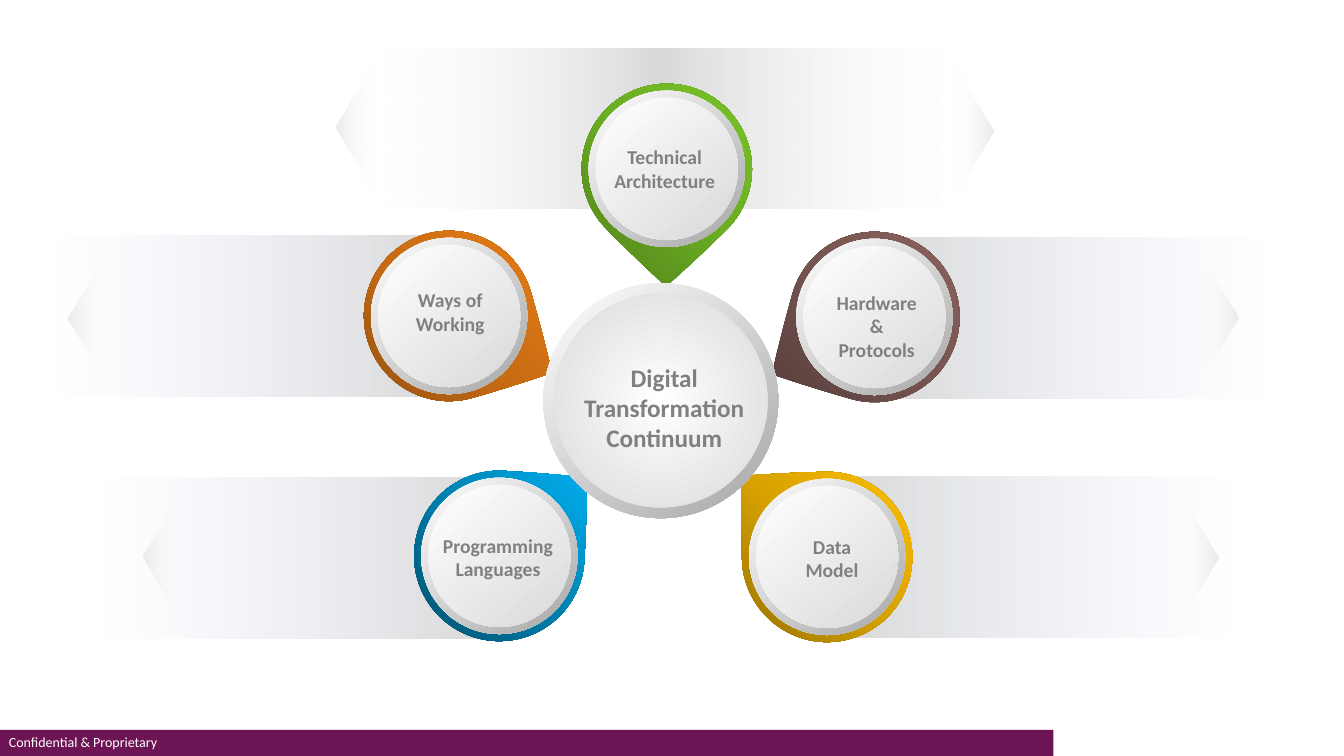
from pptx import Presentation
from pptx.dml.color import RGBColor
from pptx.enum.shapes import MSO_SHAPE
from pptx.enum.text import MSO_ANCHOR, PP_ALIGN
from pptx.oxml import parse_xml
from pptx.oxml.ns import nsdecls
from pptx.util import Pt

RECTANGLE = MSO_SHAPE.RECTANGLE
OVAL = MSO_SHAPE.OVAL
TEAR = MSO_SHAPE.TEAR
TRIANGLE = MSO_SHAPE.ISOSCELES_TRIANGLE
CENTER = PP_ALIGN.CENTER
LEFT = PP_ALIGN.LEFT
MIDDLE = MSO_ANCHOR.MIDDLE

FONT = "Calibri"
GREY = "808080"
PURPLE = "6D1554"
WHITE = "FFFFFF"
RIM = [(0, WHITE, 100), (100, "A6A6A6", 100)]
FACE = [(0, WHITE, 100), (100, "D9D9D9", 100)]
SIDE_BAND = [(0, "D9D9D9", 100), (100, "E1E8F5", 0)]
TOP_BAND = [(0, WHITE, 0), (49, "D9D9D9", 100), (100, WHITE, 0)]
TIP = [(0, WHITE, 0), (100, "EBEBEB", 100)]
BAND_WIDTH, BAND_HEIGHT = 286.6, 114.5
LIGHT_ANGLE = 50
DROP_ANGLE = 315

BANDS = [
    (39.6, 168.5, 180),
    (593.3, 340.6, 0),
    (72, 341.3, 180),
    (618.5, 169.9, 0),
]
TIPS = [
    (870.1, 226.8, 90),
    (855.7, 398.2, 90),
    (116.3, 397.4, 270),
    (63, 227.5, 270),
    (695.2, 93.6, 90),
    (253.8, 90.7, 270),
]
DROPS = [
    (356.7, 397.1, 3.2, ["004D6A", "00B0F0"],
     ["Programming", "Languages"], (355.7, 397.8)),
    (320.8, 225.7, 73.9, ["8C4C0E", "C86C14", "ED8018"],
     ["Ways of", "Working"], (321.6, 222.8)),
    (476.3, 120.6, 135.4, ["4B7918", "6BAD23", "7ECD29"],
     ["Technical", "Architecture"], (474.8, 120.6)),
    (624.6, 226.4, 195.8, ["533C39", "775551", "8D6560"],
     ["Hardware", "&", "Protocols"], (626.2, 232.9)),
    (590.8, 397.8, 268.6, ["977200", "D7A200", "FFC000"],
     ["Data", "Model"], (594.3, 398.5)),
]


def color(value):
    return RGBColor.from_string(value)


def add_plain(page, kind, left, top, width, height):
    shape = page.shapes.add_shape(kind, Pt(left), Pt(top), Pt(width), Pt(height))
    shape.shadow.inherit = False
    shape.line.fill.background()
    return shape


def add_centered(page, kind, x, y, width, height):
    return add_plain(page, kind, x - width / 2, y - height / 2, width, height)


def fill_gradient(shape, stops, angle=None):
    stop_xml = "".join(
        f'<a:gs pos="{position * 1000}"><a:srgbClr val="{value}">'
        f'<a:alpha val="{opacity * 1000}"/></a:srgbClr></a:gs>'
        for position, value, opacity in stops
    )
    if angle is None:
        direction = ('<a:path path="circle"><a:fillToRect l="50000" t="50000" '
                     'r="50000" b="50000"/></a:path>')
    else:
        direction = f'<a:lin ang="{round(angle % 360 * 60000)}" scaled="0"/>'
    gradient = parse_xml(
        f'<a:gradFill {nsdecls("a")} rotWithShape="1">'
        f'<a:gsLst>{stop_xml}</a:gsLst>{direction}</a:gradFill>'
    )
    shape.fill.background()
    properties = shape.element.spPr
    properties.replace(properties.find("{*}noFill"), gradient)


def add_text(page, lines, left, top, width, height, size, value, align, bold):
    box = page.shapes.add_textbox(Pt(left), Pt(top), Pt(width), Pt(height))
    frame = box.text_frame
    frame.word_wrap = True
    frame.vertical_anchor = MIDDLE
    frame.text = "\n".join(lines)
    for para in frame.paragraphs:
        para.alignment = align
        para.font.name = FONT
        para.font.size = Pt(size)
        para.font.bold = bold
        para.font.color.rgb = color(value)


def add_label(page, lines, x, y, size, width):
    height = len(lines) * size * 1.22 + 7.2
    add_text(page, lines, x - width / 2, y - height / 2, width, height,
             size, GREY, CENTER, True)


def add_disc(page, x, y, diameter, stops, angle=None):
    disc = add_centered(page, OVAL, x, y, diameter, diameter)
    fill_gradient(disc, stops, angle)


def add_drop(page, x, y, rotation, colors):
    drop = add_centered(page, TEAR, x, y, 121.7, 121.7)
    drop.adjustments[0] = 0.975
    drop.rotation = rotation
    step = 100 // (len(colors) - 1)
    stops = [(index * step, value, 100) for index, value in enumerate(colors)]
    fill_gradient(drop, stops, DROP_ANGLE - rotation)
    add_disc(page, x, y, 111.6, RIM, LIGHT_ANGLE)
    add_disc(page, x, y, 101.5, FACE, LIGHT_ANGLE)


def add_band(page, left, top, width, stops, angle):
    band = add_plain(page, RECTANGLE, left, top, width, BAND_HEIGHT)
    fill_gradient(band, stops, angle)


def add_tip(page, x, y, rotation):
    tip = add_centered(page, TRIANGLE, x, y, 97.2, 28.8)
    tip.rotation = rotation
    fill_gradient(tip, TIP, 270)


def add_footer(page):
    bar = add_plain(page, RECTANGLE, 0, 521.3, 752.4, 18.7)
    bar.fill.solid()
    bar.fill.fore_color.rgb = color(PURPLE)
    add_text(page, ["Confidential & Proprietary"], -0.7, 520.6, 240.5, 19.4,
             10, WHITE, LEFT, False)


def main():
    deck = Presentation()
    deck.slide_width, deck.slide_height = Pt(960), Pt(540)
    page = deck.slides.add_slide(deck.slide_layouts[6])
    add_footer(page)
    add_band(page, 254.2, 34.6, 443.5, TOP_BAND, 0)
    for left, top, angle in BANDS:
        add_band(page, left, top, BAND_WIDTH, SIDE_BAND, angle)
    for x, y, rotation, colors, _, _ in DROPS:
        add_drop(page, x, y, rotation, colors)
    add_disc(page, 472, 286.2, 167.8, RIM, LIGHT_ANGLE)
    add_disc(page, 472, 286.2, 152.6, FACE)
    add_label(page, ["Digital", "Transformation", "Continuum"], 474.5, 291.2, 18, 150)
    for _, _, _, _, lines, (x, y) in DROPS:
        add_label(page, lines, x, y, 14, 110)
    for x, y, rotation in TIPS:
        add_tip(page, x, y, rotation)
    deck.save("out.pptx")


if __name__ == "__main__":
    main()
